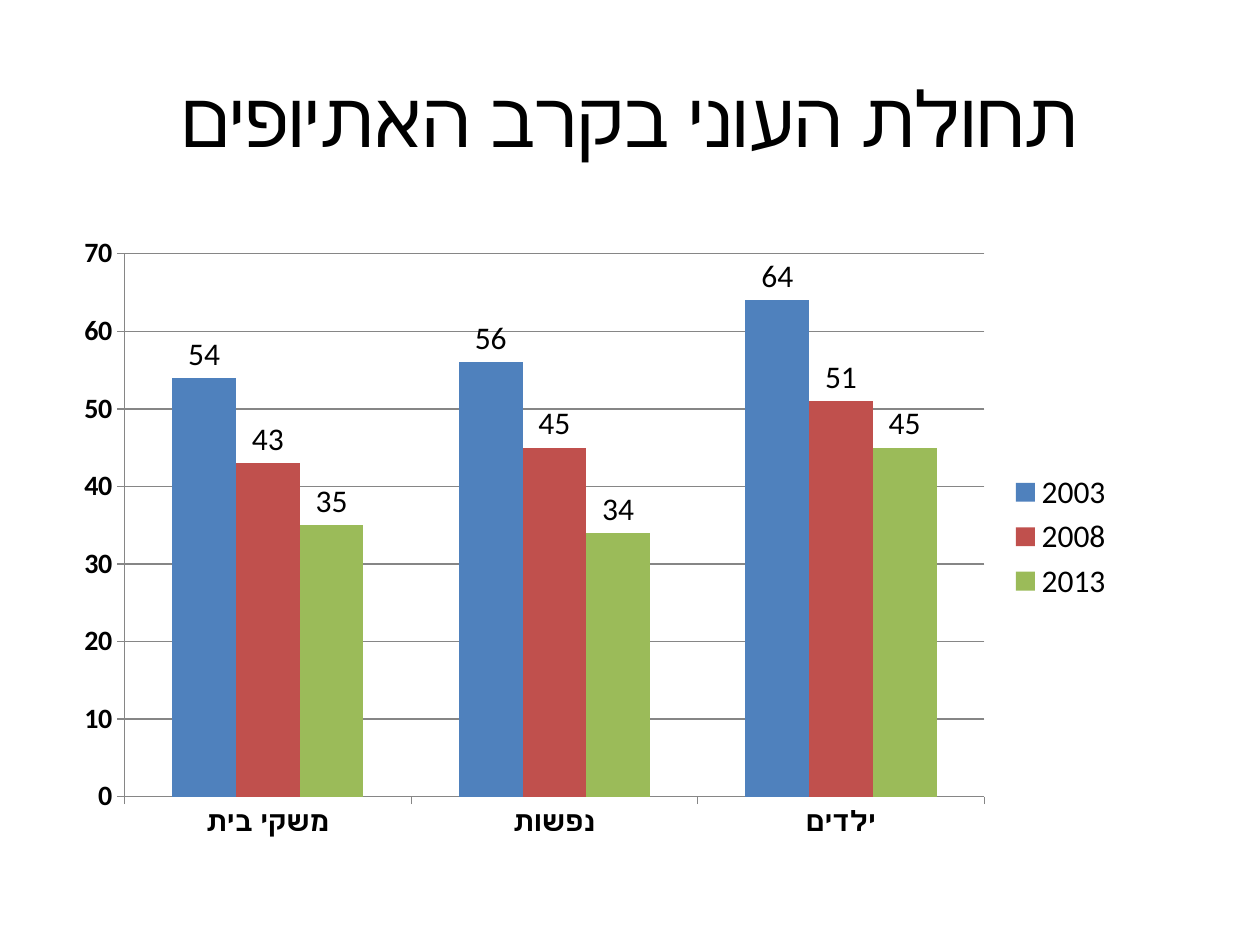
from dataclasses import dataclass

from pptx import Presentation
from pptx.chart.data import CategoryChartData
from pptx.dml.color import RGBColor
from pptx.enum.chart import XL_CHART_TYPE, XL_LABEL_POSITION, XL_LEGEND_POSITION, XL_TICK_MARK
from pptx.enum.text import MSO_ANCHOR, PP_ALIGN
from pptx.util import Inches, Pt

CLUSTERED = XL_CHART_TYPE.COLUMN_CLUSTERED
OUTSIDE_END = XL_LABEL_POSITION.OUTSIDE_END
LEGEND_RIGHT = XL_LEGEND_POSITION.RIGHT
TICK_OUT, TICK_NONE = XL_TICK_MARK.OUTSIDE, XL_TICK_MARK.NONE


@dataclass(frozen=True)
class Theme:
    font: str = "Calibri"
    text: RGBColor = RGBColor.from_string("000000")
    lines: RGBColor = RGBColor.from_string("868686")
    title_size: Pt = Pt(44)
    chart_size: Pt = Pt(18)
    axis_size: Pt = Pt(16)


theme = Theme()
groups = ["משקי בית", "נפשות", "ילדים"]
poverty_by_year = {
    "2003": ([54, 56, 64], "4F81BD"),
    "2008": ([43, 45, 51], "C0504D"),
    "2013": ([35, 34, 45], "9BBB59"),
}


def set_font(font, size, bold=False):
    font.name = theme.font
    font.size = size
    font.bold = bold
    font.color.rgb = theme.text


prs = Presentation()
prs.slide_width, prs.slide_height = Inches(10), Inches(7.5)
slide = prs.slides.add_slide(prs.slide_layouts[5])

# Title
title = slide.shapes.title
title.left, title.top = Inches(0.5), Inches(0.3)
title.width, title.height = Inches(9), Inches(1.25)
title.text_frame.text = "תחולת העוני בקרב האתיופים"
title.text_frame.vertical_anchor = MSO_ANCHOR.MIDDLE
heading = title.text_frame.paragraphs[0]
heading.alignment = PP_ALIGN.CENTER
heading._p.get_or_add_pPr().set("rtl", "1")
set_font(heading.font, theme.title_size)

# Poverty chart
chart_data = CategoryChartData()
chart_data.categories = groups
for year, (rates, _) in poverty_by_year.items():
    chart_data.add_series(year, rates)
chart = slide.shapes.add_chart(
    CLUSTERED, Inches(0.5), Inches(1.78), Inches(8.44), Inches(4.96), chart_data
).chart
chart.has_title = False
set_font(chart.font, theme.chart_size)

chart.has_legend = True
chart.legend.position = LEGEND_RIGHT
chart.legend.include_in_layout = False
set_font(chart.legend.font, theme.chart_size)

for axis in (chart.category_axis, chart.value_axis):
    axis.major_tick_mark = TICK_OUT
    axis.minor_tick_mark = TICK_NONE
    axis.format.line.color.rgb = theme.lines
    set_font(axis.tick_labels.font, theme.axis_size, bold=True)
rate_axis = chart.value_axis
rate_axis.minimum_scale, rate_axis.maximum_scale, rate_axis.major_unit = 0, 70, 10
rate_axis.has_major_gridlines = True
rate_axis.major_gridlines.format.line.color.rgb = theme.lines

plot = chart.plots[0]
plot.gap_width = 150
plot.overlap = 0
plot.vary_by_categories = False
for series, (_, color) in zip(plot.series, poverty_by_year.values()):
    series.format.fill.solid()
    series.format.fill.fore_color.rgb = RGBColor.from_string(color)
    labels = series.data_labels
    labels.show_value = True
    labels.position = OUTSIDE_END
    set_font(labels.font, theme.chart_size)

prs.save("out.pptx")
